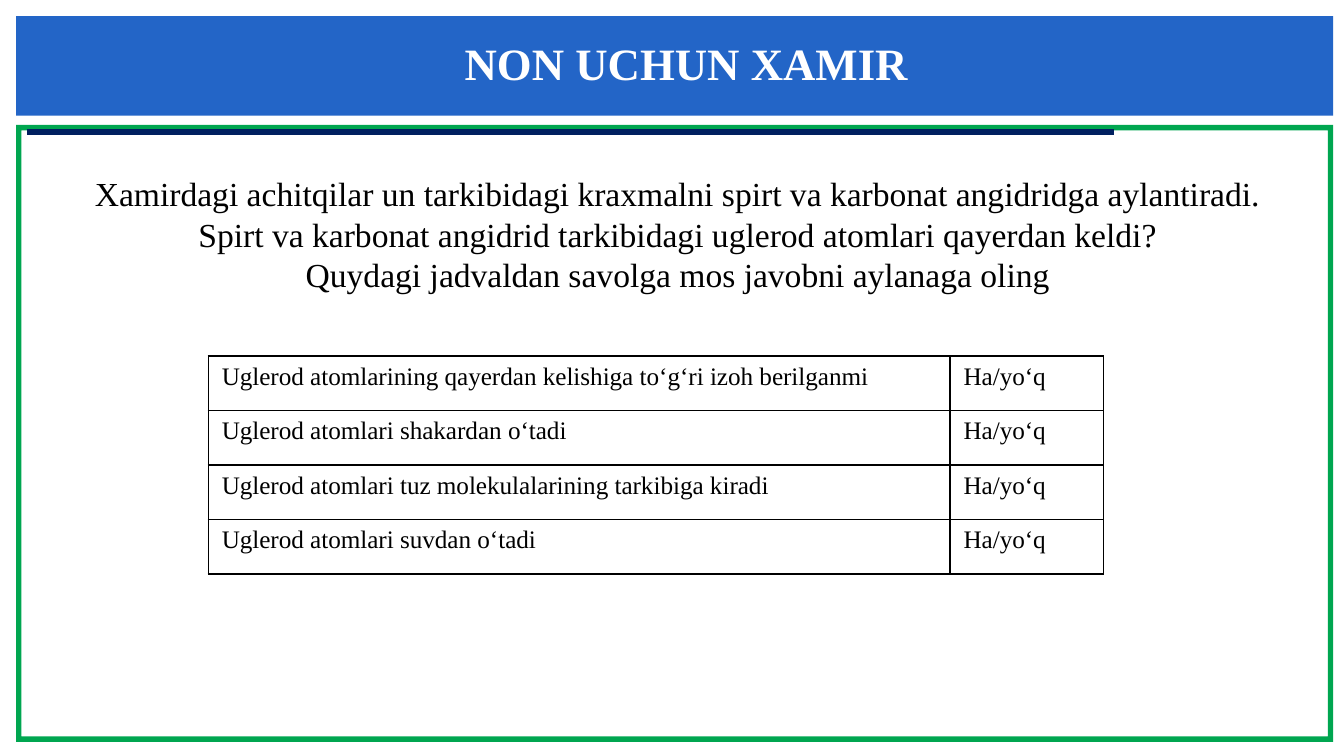
from lxml import etree
from pptx import Presentation
from pptx import util as u
from pptx.dml.color import RGBColor
from pptx.enum import shapes, text
from pptx.oxml.ns import qn

COLORS = {"green": "00A650", "blue": "2365C7", "navy": "002060",
          "white": "FFFFFF", "black": "000000"}


def write(frame, content, size=18, color="black", bold=False, align=text.PP_ALIGN.LEFT):
    for number, line in enumerate(content.split("\n")):
        paragraph = frame.add_paragraph() if number else frame.paragraphs[0]
        paragraph.alignment = align
        run = paragraph.add_run()
        run.text = line
        run.font.name = "Times New Roman"
        run.font.size = u.Pt(size)
        run.font.bold = bold
        run.font.color.rgb = RGBColor.from_string(COLORS[color])


def fill_plain(shape, color):
    shape.shadow.inherit = False
    shape.fill.solid()
    shape.fill.fore_color.rgb = RGBColor.from_string(COLORS[color])
    shape.line.fill.background()


# Widescreen 16:9 slide
deck = Presentation()
deck.slide_width, deck.slide_height = u.Inches(10), u.Inches(10 * 9 / 16)
slide = deck.slides.add_slide(deck.slide_layouts[6])

# Green frame: outer edge and inner edge
left, top, right, bottom, edge = 0.12, 0.93, 9.92, 5.52, 0.04
outer = [(left, top), (right, top), (right, bottom), (left, bottom)]
inner = [(left + edge, top + edge), (left + edge, bottom - edge),
         (right - edge, bottom - edge), (right - edge, top + edge)]
outer, inner = ([(u.Inches(x), u.Inches(y)) for x, y in ring] for ring in (outer, inner))
outline = slide.shapes.build_freeform(*outer[0], scale=1.0)
outline.add_line_segments(outer[1:], close=True)
outline.move_to(*inner[0])
outline.add_line_segments(inner[1:], close=True)
fill_plain(outline.convert_to_shape(), "green")

# Title band
band = slide.shapes.add_shape(shapes.MSO_SHAPE.RECTANGLE, u.Inches(0.12), u.Inches(0.12),
                              u.Inches(9.8), u.Inches(0.74))
fill_plain(band, "blue")

# Navy rule under the band
rule = slide.shapes.add_connector(shapes.MSO_CONNECTOR.STRAIGHT, u.Inches(0.2), u.Inches(0.98),
                                  u.Inches(8.29), u.Inches(0.98))
rule.line.color.rgb = RGBColor.from_string(COLORS["navy"])
rule.line.width = u.Pt(3)
etree.SubElement(rule._element.spPr, qn("a:effectLst"))

# Title
title = slide.shapes.add_textbox(u.Inches(3.34), u.Inches(0.22), u.Inches(3.53), u.Inches(0.5))
title.text_frame.word_wrap = False
write(title.text_frame, "NON UCHUN XAMIR", size=24, color="white", bold=True,
      align=text.PP_ALIGN.CENTER)

# Question
question = slide.shapes.add_textbox(u.Inches(0.36), u.Inches(1.24), u.Inches(9.37), u.Inches(1.01))
question.text_frame.word_wrap = True
write(question.text_frame,
      "Xamirdagi achitqilar un tarkibidagi kraxmalni spirt va karbonat angidridga aylantiradi. "
      "Spirt va karbonat angidrid tarkibidagi uglerod atomlari qayerdan keldi?\n"
      "Quydagi jadvaldan savolga mos javobni aylanaga oling",
      align=text.PP_ALIGN.CENTER)

# Answer table
statements = ["Uglerod atomlarining qayerdan kelishiga to‘g‘ri izoh berilganmi",
              "Uglerod atomlari shakardan o‘tadi",
              "Uglerod atomlari tuz molekulalarining tarkibiga kiradi",
              "Uglerod atomlari suvdan o‘tadi"]
answers = slide.shapes.add_table(len(statements), 2, u.Inches(1.55), u.Inches(2.65),
                                 u.Inches(6.66), u.Inches(1.62)).table
answers.first_row = answers.horz_banding = False
answers.columns[0].width, answers.columns[1].width = u.Inches(5.52), u.Inches(1.14)
for row, statement in enumerate(statements):
    for column, content in enumerate((statement, "Ha/yo‘q")):
        cell = answers.cell(row, column)
        write(cell.text_frame, content, size=13.5)
        properties = cell._tc.get_or_add_tcPr()
        for side in ("lnL", "lnR", "lnT", "lnB"):
            border = etree.SubElement(properties, qn(f"a:{side}"), w=str(u.Pt(1)))
            paint = etree.SubElement(border, qn("a:solidFill"))
            etree.SubElement(paint, qn("a:srgbClr"), val=COLORS["black"])
        cell.fill.background()

deck.save("out.pptx")
